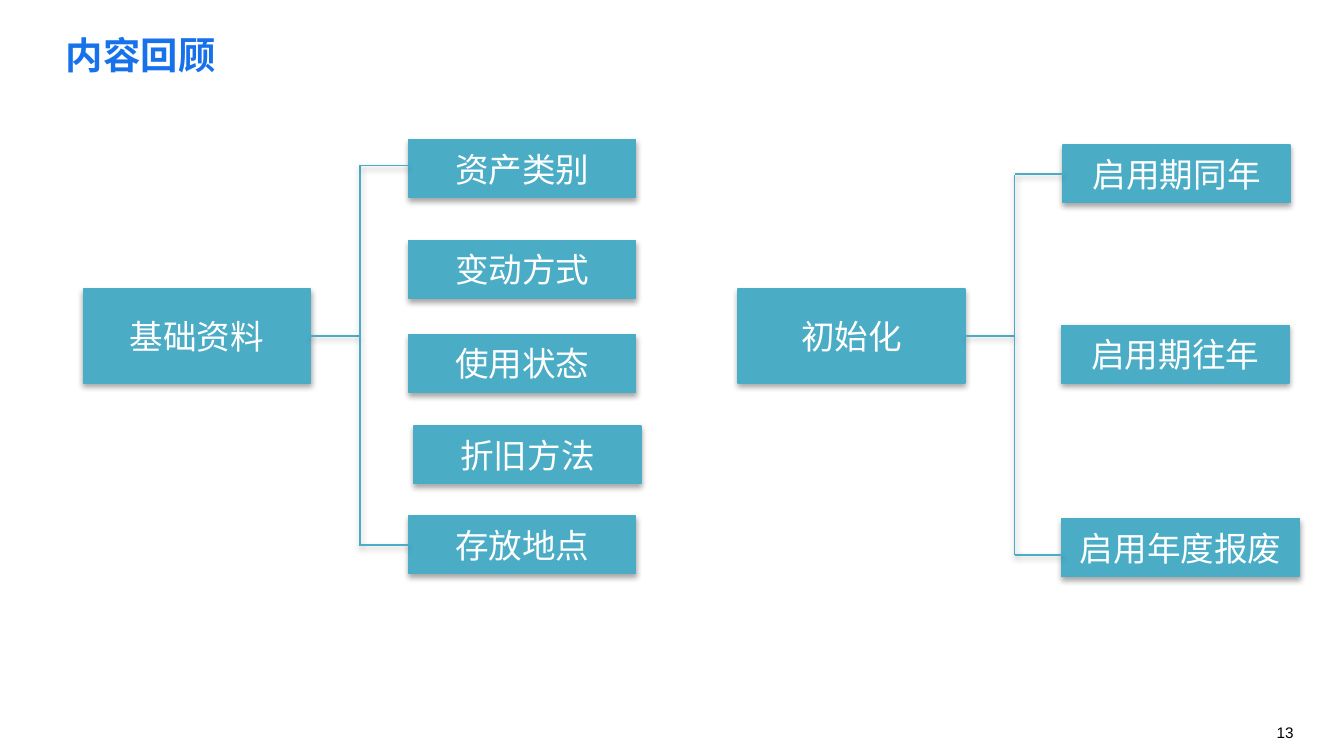
"""Build the review slide: two bracket trees of topics."""
import pptx
import pptx.util
import pptx.oxml
import pptx.oxml.ns
import pptx.dml.color
import pptx.enum.shapes
import pptx.enum.text
import lxml.etree

Inches, Pt = pptx.util.Inches, pptx.util.Pt
RGB = pptx.dml.color.RGBColor
TEAL = RGB(0x4B, 0xAC, 0xC6)
BLUE = RGB(0x17, 0x71, 0xEA)
WHITE = RGB(0xFF, 0xFF, 0xFF)
BLACK = RGB(0, 0, 0)
MID = pptx.enum.text.MSO_ANCHOR.MIDDLE
TOP = pptx.enum.text.MSO_ANCHOR.TOP
LEFT = pptx.enum.text.PP_ALIGN.LEFT
CENTER = pptx.enum.text.PP_ALIGN.CENTER
RECT = pptx.enum.shapes.MSO_SHAPE.RECTANGLE
LINE = pptx.enum.shapes.MSO_CONNECTOR.STRAIGHT
SHADE = (
    '<a:effectLst xmlns:a="http://schemas.openxmlformats.org/drawingml/2006/main">'
    '<a:outerShdw blurRad="40000" dist="23000" dir="5400000" rotWithShape="0">'
    '<a:srgbClr val="000000"><a:alpha val="35000"/></a:srgbClr>'
    '</a:outerShdw></a:effectLst>'
)


def outline(item):
    item.line.color.rgb = TEAL
    item.line.width = Pt(0.75)
    item._element.spPr.append(pptx.oxml.parse_xml(SHADE))


def write(item, text, face, size, color, align, anchor):
    frame = item.text_frame
    frame.text = text
    frame.word_wrap = True
    frame.vertical_anchor = anchor
    para = frame.paragraphs[0]
    para.alignment = align
    font = para.runs[0].font
    font.name, font.size, font.color.rgb = face, Pt(size), color
    east = lxml.etree.SubElement(font._element, pptx.oxml.ns.qn("a:ea"))
    east.set("typeface", "Noto Sans CJK SC")
    return frame


deck = pptx.Presentation()
deck.slide_width = Inches(10)
deck.slide_height = deck.slide_width * 9 // 16
slide = deck.slides.add_slide(deck.slide_layouts[5])
shapes = slide.shapes

title = shapes.title
title.left, title.top = Inches(0.49), Inches(0.24)
title.width, title.height = Inches(9.19), Inches(0.57)
frame = write(title, "内容回顾", "Noto Sans CJK SC", 20, BLUE, LEFT, TOP)
frame.paragraphs[0].runs[0].font.bold = True
frame.auto_size = pptx.enum.text.MSO_AUTO_SIZE.NONE

page = shapes.add_textbox(Inches(9.5), Inches(5.38), Inches(0.5), Inches(0.14))
num = write(page, "13", "Arial", 8.2, BLACK, LEFT, MID)
for area in (frame, num):
    area.margin_left = area.margin_right = 0
    area.margin_top = area.margin_bottom = 0

WIDE, ROOT, LEAF = 1.69, 0.7, 0.43
trees = [
    ("基础资料", 0.62, 1.23, 4.06, [
        ("资产类别", 3.04, 1.04, WIDE),
        ("变动方式", 3.04, 1.79, WIDE),
        ("使用状态", 3.04, 2.49, WIDE),
        ("折旧方法", 3.08, 3.17, WIDE),
        ("存放地点", 3.04, 3.84, WIDE),
    ]),
    ("初始化", 5.49, 1.3, 4.13, [
        ("启用期同年", 7.91, 1.08, WIDE),
        ("启用期往年", 7.9, 2.42, WIDE),
        ("启用年度报废", 7.9, 3.86, 1.77),
    ]),
]

for name, left, high, low, leaves in trees:
    boxes = []
    rows = [(name, left, 2.15, WIDE, ROOT)] + [leaf + (LEAF,) for leaf in leaves]
    for text, x, y, wide, tall in rows:
        box = shapes.add_shape(RECT, Inches(x), Inches(y), Inches(wide), Inches(tall))
        box.fill.solid()
        box.fill.fore_color.rgb = TEAL
        outline(box)
        write(box, text, "Calibri", 18, WHITE, CENTER, MID)
        boxes.append(box)

    root, first, last = boxes[0], boxes[1], boxes[-1]
    edge, spine, tip = left + WIDE, left + WIDE + 0.37, leaves[0][1]
    links = [
        (edge, 2.5, spine, 2.5, root, None),
        (spine, high, spine, low, None, None),
        (spine, high, tip, high, None, first),
        (spine, low, tip, low, None, last),
    ]
    for x1, y1, x2, y2, start, end in links:
        if end:
            half = (end.top + end.height / 2) / Inches(1)
            if abs(half - y2) < 0.01:
                y1 = y2 = half
            else:
                end = None
        link = shapes.add_connector(LINE, Inches(x1), Inches(y1), Inches(x2), Inches(y2))
        outline(link)
        if start:
            link.begin_connect(start, 3)
        if end:
            link.end_connect(end, 1)

deck.save("out.pptx")
